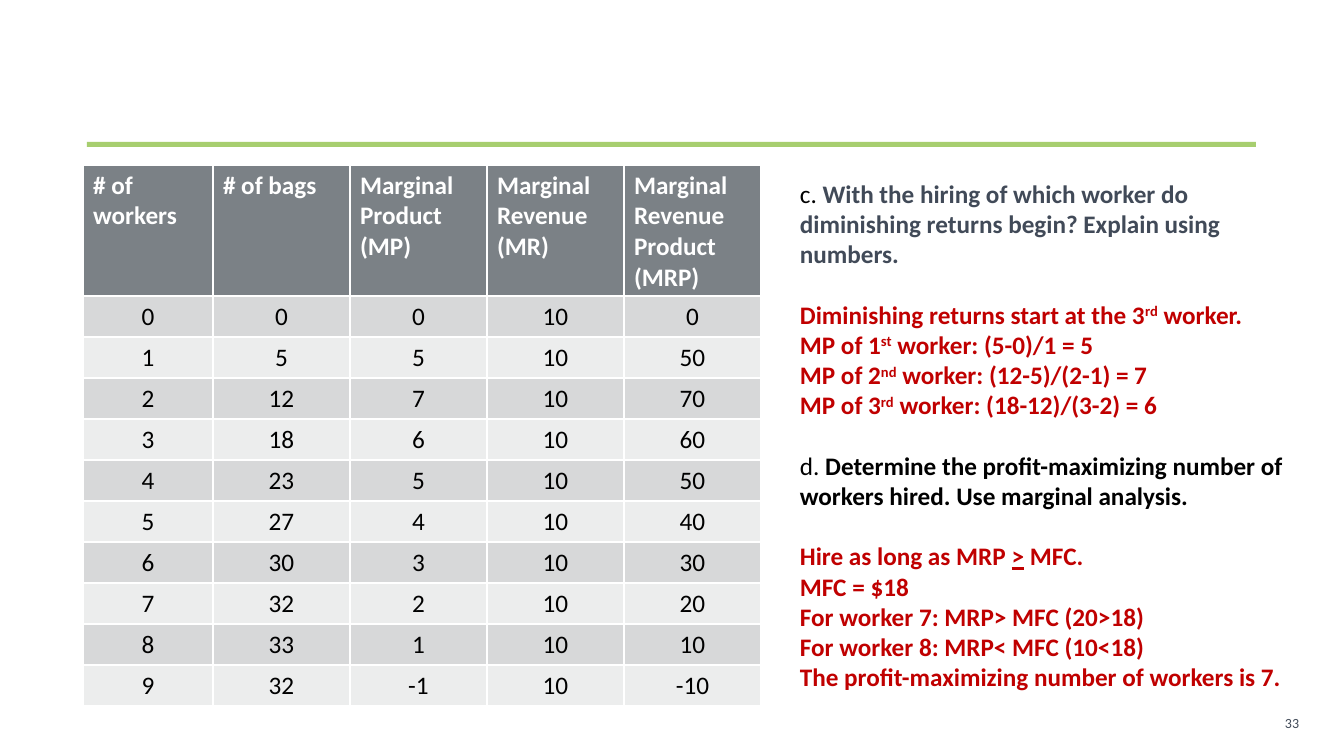
from pptx import Presentation
from pptx import util as u
from pptx.dml.color import RGBColor
from pptx.enum import shapes, text

WHITE = RGBColor(0xFF, 0xFF, 0xFF)
BLACK = RGBColor(0x00, 0x00, 0x00)
GREEN = RGBColor(0xA7, 0xCE, 0x6F)
SLATE = RGBColor(0x41, 0x4A, 0x58)
RED = RGBColor(0xC0, 0x00, 0x00)
HEADER = RGBColor(0x7B, 0x81, 0x86)
BANDS = (RGBColor(0xD7, 0xD8, 0xD9), RGBColor(0xEC, 0xED, 0xED))

HEADINGS = ["# of workers", "# of bags", "Marginal Product\n(MP)",
            "Marginal Revenue\n(MR)", "Marginal Revenue Product\n(MRP)"]
BAGS = [0, 5, 12, 18, 23, 27, 30, 32, 33, 32]
PRICE = 10

ANSWER_C = [
    [("Diminishing returns start at the 3", ""), ("rd", "super"), (" worker.", "")],
    [("MP of 1", ""), ("st", "super"), (" worker: (5-0)/1 = 5", "")],
    [("MP of 2", ""), ("nd", "super"), (" worker: (12-5)/(2-1) = 7", "")],
    [("MP of 3", ""), ("rd", "super"), (" worker: (18-12)/(3-2) = 6", "")],
]
ANSWER_D = [
    [("Hire as long as MRP ", ""), (">", "underline"), (" MFC.", "")],
    [("MFC = $18", "")],
    [("For worker 7: MRP> MFC (20>18)", "")],
    [("For worker 8: MRP< MFC (10<18)", "")],
    [("The profit-maximizing number of workers is 7.", "")],
]
QUESTION_C = ("c. ", "With the hiring of which worker do diminishing returns begin? "
              "Explain using numbers.", SLATE)
QUESTION_D = ("d. ", "Determine the profit-maximizing number of workers hired. "
              "Use marginal analysis.", BLACK)


class Deck:
    FONT = "Calibri"
    SIZE = 18
    LINE = 21.6

    def __init__(self, width, height):
        self.prs = Presentation()
        self.prs.slide_width, self.prs.slide_height = self.px(width, height)
        self.slide = self.prs.slides.add_slide(self.prs.slide_layouts[6])

    @staticmethod
    def px(*lengths):
        return [u.Emu(round(n * 914400 / 100.8)) for n in lengths]

    def style(self, font, color, bold=None, size=SIZE):
        font.name = self.FONT
        font.size = u.Pt(size)
        font.bold = bold
        font.color.rgb = color

    def bar(self, box, color):
        sp = self.slide.shapes.add_shape(shapes.MSO_SHAPE.RECTANGLE, *self.px(*box))
        sp.shadow.inherit = False
        sp.fill.solid()
        sp.fill.fore_color.rgb = color
        sp.line.fill.background()

    def text_box(self, box):
        tf = self.slide.shapes.add_textbox(*self.px(*box)).text_frame
        tf.word_wrap = True
        return tf

    def page_number(self, box, number):
        tf = self.text_box(box)
        tf.vertical_anchor = text.MSO_ANCHOR.MIDDLE
        p = tf.paragraphs[0]
        p.text = number
        p.alignment = text.PP_ALIGN.RIGHT
        self.style(p.font, SLATE, size=10)

    def table(self, box, widths, heights, rows):
        frame = self.slide.shapes.add_table(len(rows), len(widths), *self.px(*box))
        tbl = frame.table
        for column, width in zip(tbl.columns, self.px(*widths)):
            column.width = width
        for row, height in zip(tbl.rows, self.px(*heights)):
            row.height = height
        for i, values in enumerate(rows):
            for j, value in enumerate(values):
                self.cell(tbl.cell(i, j), str(value), i)

    def cell(self, cell, value, row):
        header = row == 0
        cell.fill.solid()
        cell.fill.fore_color.rgb = HEADER if header else BANDS[(row - 1) % 2]
        cell.text = value
        for p in cell.text_frame.paragraphs:
            p.alignment = text.PP_ALIGN.LEFT if header else text.PP_ALIGN.CENTER
            self.style(p.font, WHITE if header else BLACK, header)

    def paragraph(self, tf, gap):
        first = not tf.paragraphs[0].runs
        p = tf.paragraphs[0] if first else tf.add_paragraph()
        p.line_spacing = u.Pt(self.LINE)
        if gap and not first:
            p.space_before = u.Pt(self.LINE)
        return p

    def question(self, tf, label, wording, color):
        p = self.paragraph(tf, True)
        for part, shade, bold in ((label, BLACK, False), (wording, color, True)):
            r = p.add_run()
            r.text = part
            self.style(r.font, shade, bold)

    def answer(self, tf, lines):
        for i, line in enumerate(lines):
            p = self.paragraph(tf, i == 0)
            self.style(p.font, RED, True)
            for part, mark in line:
                r = p.add_run()
                r.text = part
                if mark == "super":
                    r.font._element.set("baseline", "30000")
                elif mark == "underline":
                    r.font.underline = True

    def discussion(self, box, pairs):
        tf = self.text_box(box)
        tf.auto_size = text.MSO_AUTO_SIZE.SHAPE_TO_FIT_TEXT
        for question, lines in pairs:
            self.question(tf, *question)
            self.answer(tf, lines)


def main():
    products = [0] + [b - a for a, b in zip(BAGS, BAGS[1:])]
    rows = [HEADINGS] + [[worker, bags, mp, PRICE, mp * PRICE]
                         for worker, (bags, mp) in enumerate(zip(BAGS, products))]
    deck = Deck(1344, 756)
    deck.bar((87, 142, 1169, 5), GREEN)
    deck.page_number((949, 703, 360, 40), "33")
    deck.table((83, 165, 678, 541), [130] + [137] * 4, [131] + [41] * len(BAGS), rows)
    deck.discussion((790, 173, 529, 621), [(QUESTION_C, ANSWER_C), (QUESTION_D, ANSWER_D)])
    deck.prs.save("out.pptx")


if __name__ == "__main__":
    main()
